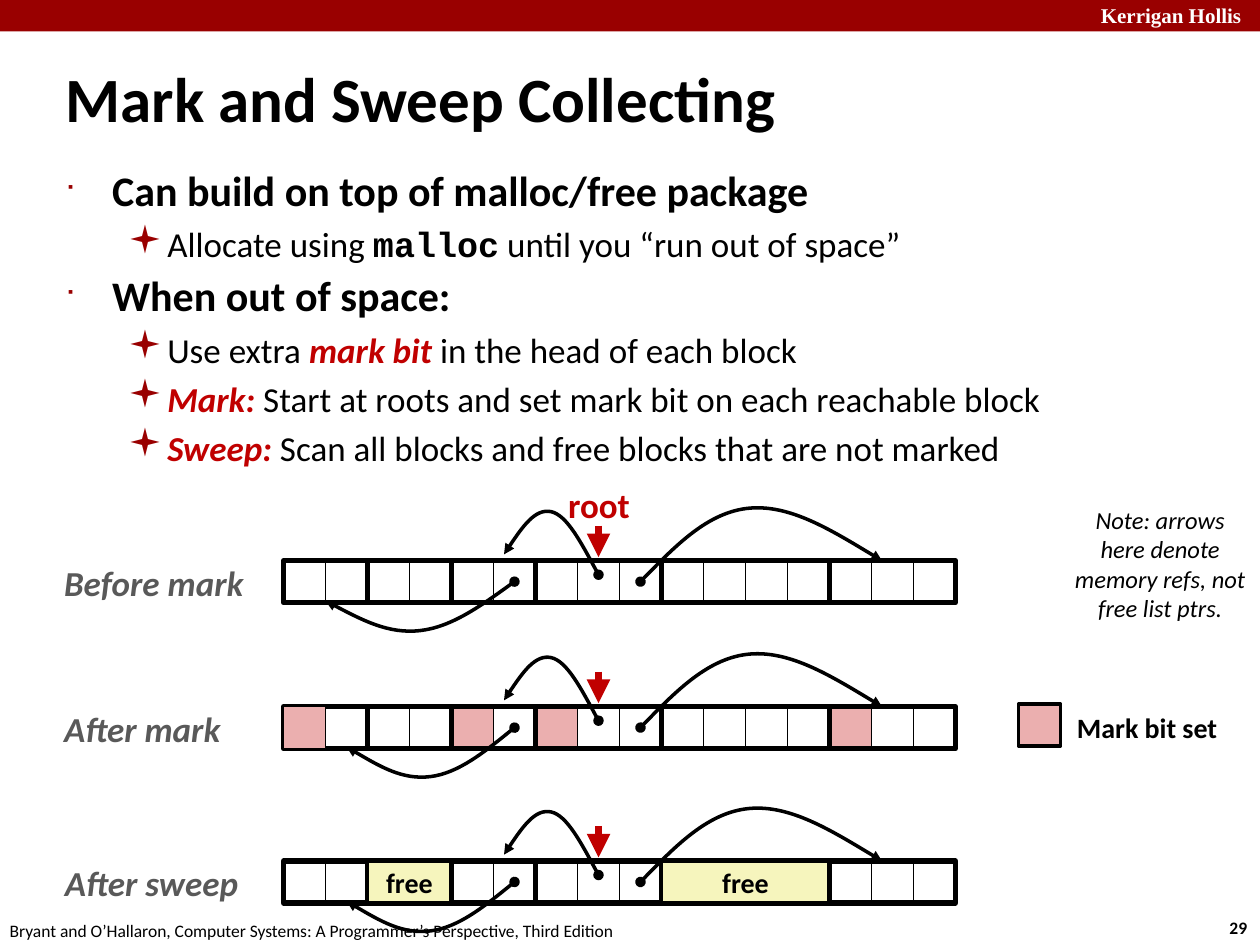
import pptx
import pptx.dml.color
import pptx.enum.shapes
import pptx.enum.text
import pptx.oxml.ns
import pptx.util

Pt = pptx.util.Pt
RGB = pptx.dml.color.RGBColor
qn = pptx.oxml.ns.qn
SHAPE = pptx.enum.shapes.MSO_SHAPE
STRAIGHT = pptx.enum.shapes.MSO_CONNECTOR.STRAIGHT
CENTER = pptx.enum.text.PP_ALIGN.CENTER
MIDDLE = pptx.enum.text.MSO_ANCHOR.MIDDLE
FIT_SHAPE = pptx.enum.text.MSO_AUTO_SIZE.SHAPE_TO_FIT_TEXT

BLACK = RGB(0x00, 0x00, 0x00)
WHITE = RGB(0xFF, 0xFF, 0xFF)
CRIMSON = RGB(0x99, 0x00, 0x00)
RED = RGB(0xC0, 0x00, 0x00)
GRAY = RGB(0x59, 0x59, 0x59)
PINK = RGB(0xEB, 0xAF, 0xAF)
YELLOW = RGB(0xF6, 0xF5, 0xBD)

prs = pptx.Presentation()
prs.slide_width, prs.slide_height = Pt(720), Pt(540)
slide = prs.slides.add_slide(prs.slide_layouts[6])
shapes = slide.shapes


def add_text(text, left, top, width, height, size, color=BLACK, bold=False,
             italic=False, font="Calibri", wrap=False, align=None):
    box = shapes.add_textbox(Pt(left), Pt(top), Pt(width), Pt(height))
    frame = box.text_frame
    frame.text = text
    frame.word_wrap = wrap
    frame.auto_size = FIT_SHAPE
    paragraph = frame.paragraphs[0]
    paragraph.alignment = align
    style = paragraph.runs[0].font
    style.name, style.size, style.color.rgb = font, Pt(size), color
    style.bold, style.italic = bold, italic
    return frame


def add_box(left, top, width, height, fill=None, line_width=0):
    box = shapes.add_shape(SHAPE.RECTANGLE, Pt(left), Pt(top), Pt(width), Pt(height))
    box.shadow.inherit = False
    if fill is None:
        box.fill.background()
    else:
        box.fill.solid()
        box.fill.fore_color.rgb = fill
    if line_width:
        box.line.color.rgb, box.line.width = BLACK, Pt(line_width)
    else:
        box.line.fill.background()
    return box


# Banner and footer
add_box(0, 0, 720, 18, CRIMSON)
add_text("Kerrigan Hollis", 622, -2, 103, 21.6, 12, WHITE, True, font="Times New Roman")
add_text("29", 695.5, 520.5, 26.6, 19.4, 10, bold=True)
add_text("Bryant and O’Hallaron, Computer Systems: A Programmer’s Perspective, "
         "Third Edition", -1.5, 522, 366, 19.4, 10)

# Title
title = add_text("Mark and Sweep Collecting", 30.4, 36, 563, 45.4, 36, bold=True, wrap=True)
title.auto_size = pptx.enum.text.MSO_AUTO_SIZE.NONE
title.vertical_anchor = MIDDLE
title.paragraphs[0].line_spacing = 0.87

# Outline: level and runs, each run with its style
outline = [
    (0, [("Can build on top of malloc/free package", "bold")]),
    (1, [("Allocate using ", ""), ("malloc", "code"), (" until you “run out of space”", "")]),
    (0, [("When out of space:", "bold")]),
    (1, [("Use extra ", ""), ("mark bit ", "key"), ("in the head of each block", "")]),
    (1, [("Mark: ", "key"), ("Start at roots and set mark bit on each reachable block", "")]),
    (1, [("Sweep: ", "key"), ("Scan all blocks and free blocks that are not marked", "")]),
]
# Per level: text size, left margin, hanging indent, bullet, bullet size
levels = [(24, 27, 27, "■", 60), (20, 58.5, 22.5, "▪", 110)]
body = shapes.add_textbox(Pt(30), Pt(92.5), Pt(654.5), Pt(189.5)).text_frame
body.word_wrap = True
for index, (level, parts) in enumerate(outline):
    size, margin, hanging, bullet, bullet_size = levels[level]
    paragraph = body.paragraphs[0] if index == 0 else body.add_paragraph()
    paragraph.level = level
    paragraph.space_before = Pt(size * 0.2)
    paragraph.line_spacing = 1.0 if level else 0.95
    for words, style in parts:
        run = paragraph.add_run()
        run.text = words
        run.font.name = "Courier New" if style == "code" else "Calibri"
        run.font.size = Pt(size)
        run.font.bold = style != ""
        run.font.italic = style == "key"
        run.font.color.rgb = RED if style == "key" else BLACK
    props = paragraph._p.get_or_add_pPr()
    props.set("marL", str(Pt(margin)))
    props.set("indent", str(-Pt(hanging)))
    bullet_color = props.makeelement(qn("a:buClr"), {})
    bullet_color.append(props.makeelement(qn("a:srgbClr"), {"val": str(CRIMSON)}))
    props.append(bullet_color)
    for tag, key, value in (("a:buSzPct", "val", str(bullet_size * 1000)),
                            ("a:buFont", "typeface", "Wingdings"),
                            ("a:buChar", "char", bullet)):
        props.append(props.makeelement(qn(tag), {key: value}))

# Memory rows: label, label left, bar top, end of lower arrow, marked and freed blocks
CELL = 24
MEMORY_LEFT = 162
block_cells = [2, 2, 2, 3, 4, 3]
starts = [MEMORY_LEFT + CELL * sum(block_cells[:i]) for i in range(len(block_cells))]
rows = [
    ("Before mark", 29.5, 320.4, 186, [], []),
    ("After mark", 29.5, 403.8, 198, [0, 2, 3, 5], []),
    ("After sweep", 30, 492, 198, [], [1, 4]),
]
for label, label_left, top, lower_end, marked, freed in rows:
    add_text(label, label_left, top - 3, 118, 31.5, 20, GRAY, True, True)

    for block in marked[1:]:
        add_box(starts[block], top, CELL, CELL, PINK, 0.75)

    # References as two Bezier segments: start, then control and end points
    lower_step = (294 - lower_end) / 6
    references = [
        [(342, 8), (333, -8.6), (324, -26), (315, -28), (306, -30), (297, -17.5), (288, -3.6)],
        [(366, 12), (385.5, -8), (405, -28), (428.5, -30), (451.5, -32), (477.5, -16), (504, 0)],
        [(294 - lower_step * i, y) for i, y in enumerate([12, 25, 38, 40, 42, 32.5, 23])],
    ]
    for points in references:
        start, *rest = [(Pt(x), Pt(top + y)) for x, y in points]
        builder = shapes.build_freeform(*start)
        builder.add_line_segments(rest, close=False)
        reference = builder.convert_to_shape()
        reference.shadow.inherit = False
        reference.fill.background()
        reference.line.color.rgb, reference.line.width = BLACK, Pt(2)
        segments = list(reference.element.iter(qn("a:lnTo")))
        for first in (0, 3):
            curve = segments[first].makeelement(qn("a:cubicBezTo"), {})
            segments[first].addprevious(curve)
            for segment in segments[first:first + 3]:
                curve.append(segment[0])
                segment.getparent().remove(segment)
        reference_line = reference.element.spPr.find(qn("a:ln"))
        for end, kind in (("a:headEnd", "oval"), ("a:tailEnd", "triangle")):
            reference_line.append(reference_line.makeelement(qn(end), {"type": kind}))

    # Root pointer
    root = shapes.add_connector(STRAIGHT, Pt(342), Pt(top - 20), Pt(342), Pt(top - 2))
    root.line.color.rgb, root.line.width = RED, Pt(4.5)
    root_line = root.element.spPr.find(qn("a:ln"))
    root_line.append(root_line.makeelement(qn("a:tailEnd"), {"type": "triangle"}))
    root.element.spPr.append(root_line.makeelement(qn("a:effectLst"), {}))

    # Blocks and the dividers between their cells
    for block, (left, cells) in enumerate(zip(starts, block_cells)):
        add_box(left, top, cells * CELL, CELL, line_width=3)
        if block in freed:
            free = add_box(left, top, cells * CELL, CELL, YELLOW, 2).text_frame
            free.text = "free"
            free.word_wrap = False
            free.vertical_anchor = MIDDLE
            free.paragraphs[0].alignment = CENTER
            style = free.paragraphs[0].runs[0].font
            style.name, style.size, style.bold = "Calibri", Pt(16), True
            style.color.rgb = BLACK
            continue
        for cell in range(1, cells):
            x = Pt(left + cell * CELL)
            divider = shapes.add_connector(STRAIGHT, x, Pt(top), x, Pt(top + CELL))
            divider.line.color.rgb = BLACK
            divider.line.width = Pt(1 if block in marked and cell == 1 else 0.5)
            divider.element.spPr.append(root_line.makeelement(qn("a:effectLst"), {}))

    # The first mark bit lies over its block's outline
    for block in marked[:1]:
        add_box(starts[block], top, CELL, CELL, PINK, 0.75)

# Root label, legend and note
add_text("root", 317.5, 273, 49.7, 31.5, 20, RED, True)
add_box(582, 402.3, CELL, CELL, PINK, 2)
add_text("Mark bit set", 608, 402.3, 95, 26.6, 16, bold=True, align=CENTER)
add_text("Note: arrows here denote memory refs, not free list ptrs.", 606, 285, 114, 75,
         14, italic=True, wrap=True, align=CENTER)

prs.save("out.pptx")
